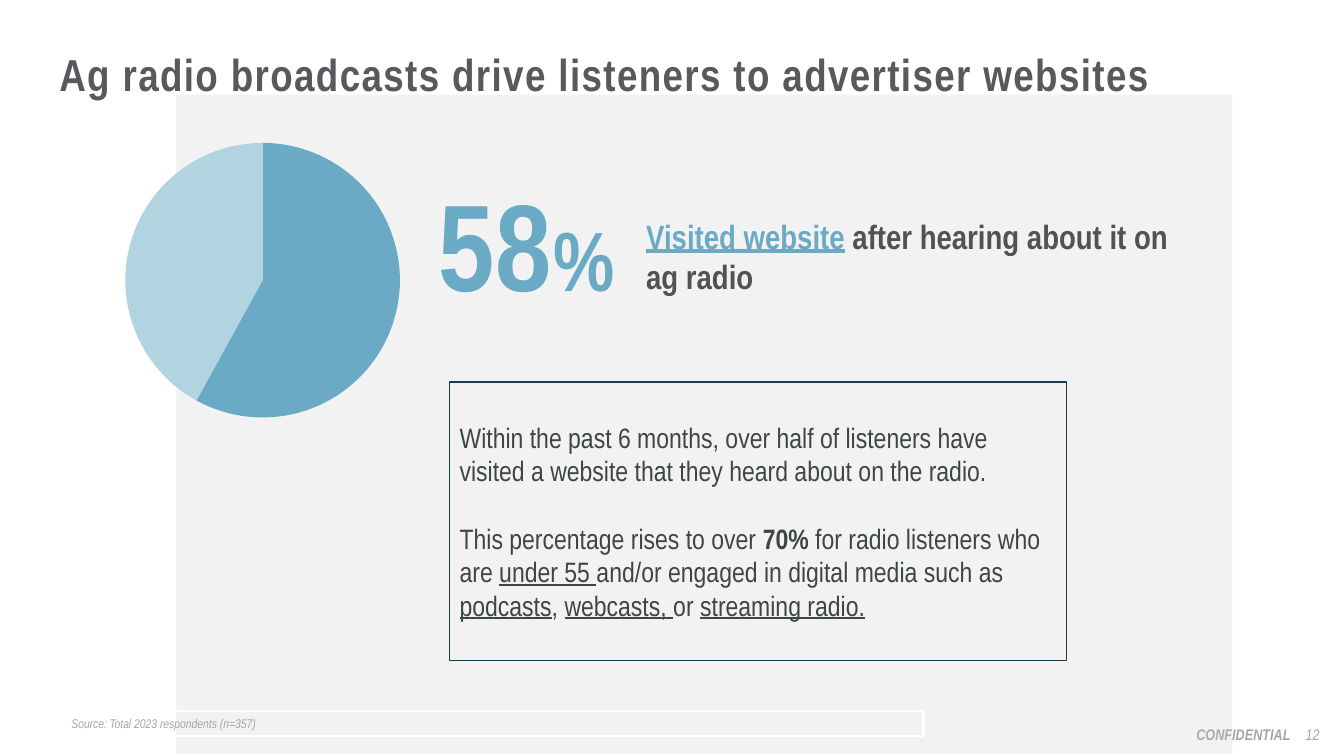
import pptx
import pptx.chart.data
import pptx.dml.color
import pptx.enum.chart
import pptx.enum.shapes
import pptx.enum.text
import pptx.oxml
import pptx.util
from pptx.util import Inches

FONT = "Arial Narrow"
BLUE = "6AAAC4"
PALE_BLUE = "B2D3E0"
NAVY = "1A3D4F"
GRAY = "A6A6A6"
BODY = "3F4444"
ALIGN = pptx.enum.text.PP_ALIGN
MIDDLE = pptx.enum.text.MSO_ANCHOR.MIDDLE


def rgb(value):
    return pptx.dml.color.RGBColor.from_string(value)


def add_panel(page, left, top, width, height, color, opacity):
    """Add a borderless rectangle; opacity is in percent."""
    panel = page.shapes.add_shape(
        pptx.enum.shapes.MSO_SHAPE.RECTANGLE,
        Inches(left), Inches(top), Inches(width), Inches(height))
    panel.shadow.inherit = False
    panel.line.fill.background()
    panel.fill.solid()
    panel.fill.fore_color.rgb = rgb(color)
    fill_color = panel.fill._xPr.find(".//" + pptx.oxml.ns.qn("a:srgbClr"))
    alpha = pptx.oxml.parse_xml(
        f'<a:alpha {pptx.oxml.ns.nsdecls("a")} val="{opacity * 1000}"/>')
    fill_color.append(alpha)


def add_frame(page, left, top, width, height, color, weight):
    """Add an unfilled rectangle that can hold text."""
    frame = page.shapes.add_shape(
        pptx.enum.shapes.MSO_SHAPE.RECTANGLE,
        Inches(left), Inches(top), Inches(width), Inches(height))
    frame.shadow.inherit = False
    frame.fill.background()
    frame.line.color.rgb = rgb(color)
    frame.line.width = pptx.util.Pt(weight)
    return frame


def add_box(page, left, top, width, height):
    return page.shapes.add_textbox(
        Inches(left), Inches(top), Inches(width), Inches(height))


def write(box, paragraphs, size, color, bold=None, italic=None, align=ALIGN.LEFT,
          anchor=pptx.enum.text.MSO_ANCHOR.TOP, line_spacing=None, gap=0, tracking=None):
    """Fill a box; each paragraph is a list of (text, font settings) spans."""
    frame = box.text_frame
    frame.word_wrap = True
    frame.vertical_anchor = anchor
    for index, spans in enumerate(paragraphs):
        para = frame.add_paragraph() if index else frame.paragraphs[0]
        para.alignment = align
        para.line_spacing = line_spacing
        if index:
            para.space_before = pptx.util.Pt(gap)
        para.font.name = FONT
        para.font.size = pptx.util.Pt(size)
        para.font.color.rgb = rgb(color)
        para.font.bold = bold
        para.font.italic = italic
        for text, settings in spans:
            span = para.add_run()
            span.text = text
            if tracking:
                span.font._element.set("spc", str(tracking * 100))
            if "color" in settings:
                span.font.color.rgb = rgb(settings["color"])
            if "size" in settings:
                span.font.size = pptx.util.Pt(settings["size"])
            if "bold" in settings:
                span.font.bold = settings["bold"]
            if "underline" in settings:
                span.font.underline = settings["underline"]


def add_pie(page, left, top, width, height, values, colors):
    data = pptx.chart.data.CategoryChartData()
    data.categories = [str(number + 1) for number in range(len(values))]
    data.add_series("Series 1", values)
    chart = page.shapes.add_chart(
        pptx.enum.chart.XL_CHART_TYPE.PIE,
        Inches(left), Inches(top), Inches(width), Inches(height), data).chart
    chart.has_legend = False
    chart.has_title = False
    chart.font.name = FONT
    chart.font.size = pptx.util.Pt(10)
    chart.font.color.rgb = rgb(BODY)
    plot = chart.plots[0]
    plot.vary_by_categories = True
    for index, color in enumerate(colors):
        slice_format = plot.series[0].points[index].format
        slice_format.fill.solid()
        slice_format.fill.fore_color.rgb = rgb(color)
        slice_format.line.fill.background()


def main():
    deck = pptx.Presentation()
    deck.slide_width = Inches(13.33)
    deck.slide_height = Inches(7.5)
    page = deck.slides.add_slide(deck.slide_layouts[6])
    underlined = {"underline": True}

    write(add_box(page, 11.43, 7.14, 1.47, 0.29), [[("CONFIDENTIAL", {})]],
          11, GRAY, bold=True, italic=True, align=ALIGN.RIGHT)
    add_panel(page, 1.75, 0.94, 10.47, 6.54, "BFBFBF", 20)
    write(add_box(page, 12.82, 7.09, 0.4, 0.4), [[("12", {})]],
          11, GRAY, italic=True, align=ALIGN.CENTER, anchor=MIDDLE)
    write(add_box(page, 6.31, 2.09, 5.59, 1.21),
          [[("Visited website", {"color": BLUE, "underline": True}),
            (" after hearing about it on ag radio", {})]],
          24, "505253", bold=True)
    write(add_frame(page, 0.61, 7.05, 8.55, 0.25, "FFFFFF", 1.5),
          [[("Source: Total 2023 respondents (n=357)", {})]],
          9, GRAY, italic=True, anchor=MIDDLE)
    write(add_box(page, 0.49, 0.47, 11.73, 0.93),
          [[("Ag radio broadcasts drive listeners to advertiser websites", {})]],
          32, "57595C", bold=True, line_spacing=0.9, tracking=1)
    write(add_box(page, 4.25, 1.79, 2.23, 1.43),
          [[("58", {}), ("%", {"size": 60})]],
          88, BLUE, bold=True, line_spacing=0.9, tracking=1)
    add_pie(page, 1.05, 1.28, 3.11, 3, [58, 42], [BLUE, PALE_BLUE])

    finding = add_frame(page, 4.46, 3.79, 6.12, 2.76, NAVY, 0.75)
    finding.text_frame.margin_top = Inches(0.38)
    write(finding, [
        [("Within the past 6 months, over half of listeners have visited a website "
          "that they heard about on the radio.", {})],
        [("This percentage rises to over ", {}), ("70% ", {"bold": True}),
         ("for radio listeners who are ", {}), ("under 55 ", underlined),
         ("and/or engaged in digital media such as ", {}), ("podcasts", underlined),
         (", ", {}), ("webcasts, ", underlined), ("or ", {}),
         ("streaming radio.", underlined)],
    ], 20, BODY, gap=24)

    deck.save("out.pptx")


if __name__ == "__main__":
    main()
